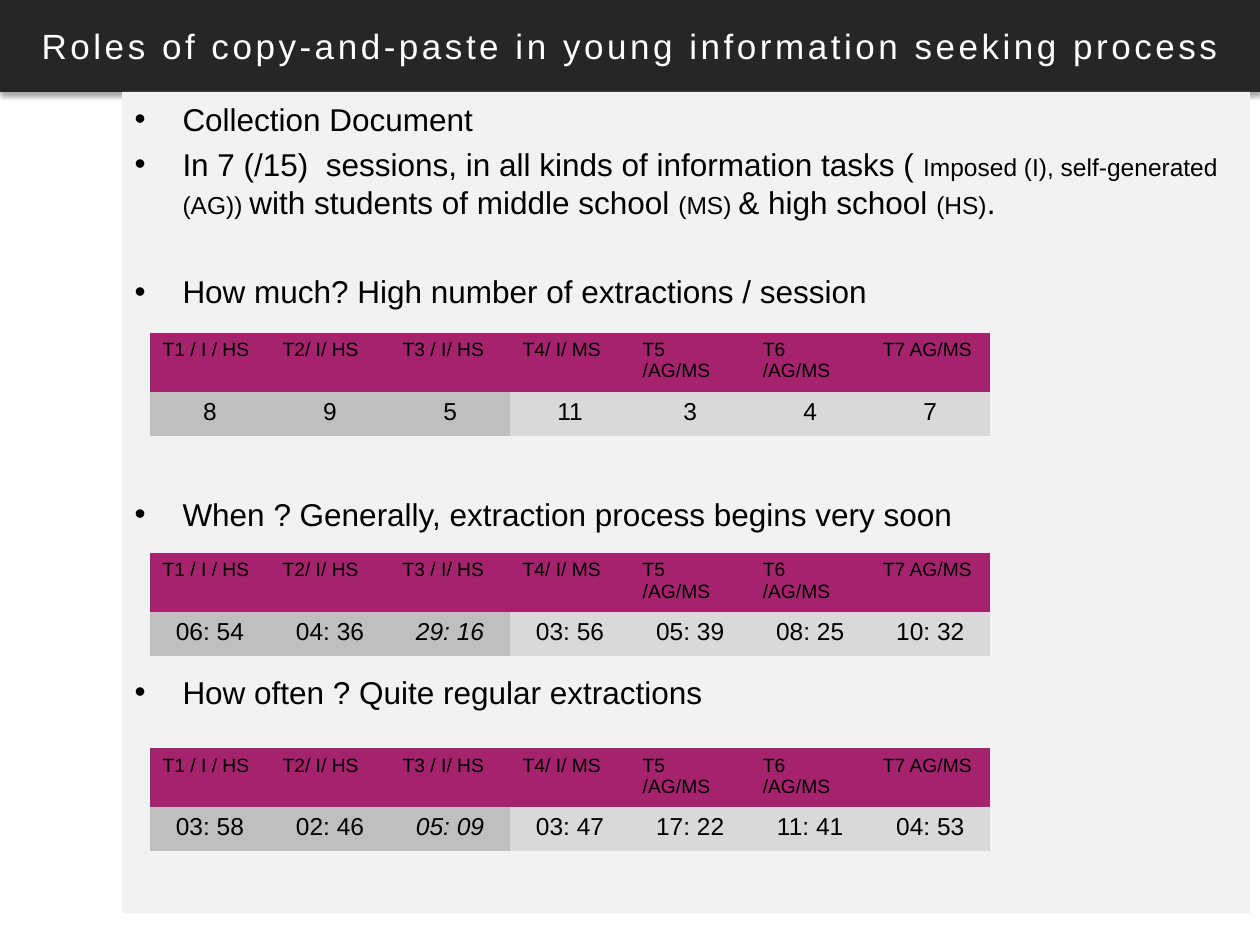
from typing import NamedTuple

from lxml.etree import SubElement
from pptx import Presentation
from pptx.dml.color import RGBColor
from pptx.enum.text import MSO_ANCHOR, MSO_AUTO_SIZE, PP_ALIGN
from pptx.oxml import parse_xml
from pptx.oxml.ns import nsdecls, qn
from pptx.util import Inches, Pt

FONT = "Arial"
BLACK, WHITE, CHARCOAL, PALE = "000000", "FFFFFF", "262626", "F2F2F2"
MAGENTA, MID_GREY, LIGHT_GREY = "A5236C", "BFBFBF", "D9D9D9"
NO_STYLE_NO_GRID = "{2D5ABB26-0587-4C30-8999-92F81FD0307C}"
HIGH_SCHOOL_TASKS = 3


class Bullet(NamedTuple):
    space_before: float
    runs: list[tuple[str, int]]


class TaskTable(NamedTuple):
    top: float
    values: list[str]
    outlier: int | None = None


TASKS = ["T1 / I / HS", "T2/ I/ HS", "T3 / I/ HS", "T4/ I/ MS",
         "T5 /AG/MS", "T6 /AG/MS", "T7 AG/MS"]

BULLETS = [
    Bullet(0, [("Collection Document", 18)]),
    Bullet(4.4, [
        ("In 7 (/15)  sessions, in all kinds of information tasks ( ", 18),
        ("Imposed (I), self-generated (AG)) ", 14),
        ("with students of middle school ", 18), ("(MS) ", 14),
        ("& high school ", 18), ("(HS)", 14), (".", 18)]),
    Bullet(29.6, [("How much? High number of extractions / session", 18)]),
    Bullet(105.6, [("When ? Generally, extraction process begins very soon", 18)]),
    Bullet(79.9, [("How often ? Quite regular extractions", 18)]),
]

TABLES = [
    TaskTable(2.64, ["8", "9", "5", "11", "3", "4", "7"]),
    TaskTable(4.39, ["06: 54", "04: 36", "29: 16", "03: 56", "05: 39",
                     "08: 25", "10: 32"], outlier=2),
    TaskTable(5.94, ["03: 58", "02: 46", "05: 09", "03: 47", "17: 22",
                     "11: 41", "04: 53"], outlier=2),
]


def paint(fill, color: str) -> None:
    fill.solid()
    fill.fore_color.rgb = RGBColor.from_string(color)


def add_run(paragraph, text: str, size: float, color: str = BLACK,
            italic: bool = False):
    run = paragraph.add_run()
    run.text = text
    settings = {"name": FONT, "size": Pt(size), "bold": False, "italic": italic}
    for attribute, value in settings.items():
        setattr(run.font, attribute, value)
    paint(run.font.fill, color)
    return run


def place(shape, left: float, top: float, width: float, height: float) -> None:
    for side, value in zip(("left", "top", "width", "height"),
                           (left, top, width, height)):
        setattr(shape, side, Inches(value))


def fill_title(title) -> None:
    place(title, 0, 0, 10, 0.73)
    paint(title.fill, CHARCOAL)
    title._element.spPr.append(parse_xml(
        f'<a:effectLst {nsdecls("a")}>'
        f'<a:outerShdw blurRad="{Pt(3.1)}" dist="{Pt(1.8)}" dir="5400000" rotWithShape="0">'
        '<a:srgbClr val="000000"><a:alpha val="35000"/></a:srgbClr>'
        '</a:outerShdw></a:effectLst>'))
    frame = title.text_frame
    frame.auto_size = MSO_AUTO_SIZE.NONE
    frame.vertical_anchor = MSO_ANCHOR.MIDDLE
    heading = frame.paragraphs[0]
    heading.alignment = PP_ALIGN.CENTER
    run = add_run(heading, "Roles of copy-and-paste in young information seeking process",
                  20, WHITE)
    run.font._element.set("spc", "200")


def add_bullets(slide, bullets: list[Bullet]) -> None:
    panel = slide.shapes.add_textbox(
        Inches(0.97), Inches(0.73), Inches(8.95), Inches(6.52))
    paint(panel.fill, PALE)
    frame = panel.text_frame
    frame.word_wrap = True
    frame.margin_top = Inches(0.06)
    for index, bullet in enumerate(bullets):
        paragraph = frame.add_paragraph() if index else frame.paragraphs[0]
        paragraph.space_before = Pt(bullet.space_before)
        properties = paragraph._p.get_or_add_pPr()
        properties.set("marL", str(Inches(0.38)))
        properties.set("indent", str(-Inches(0.38)))
        SubElement(properties, qn("a:buFont")).set("typeface", FONT)
        SubElement(properties, qn("a:buChar")).set("char", "•")
        for text, size in bullet.runs:
            add_run(paragraph, text, size)


def add_task_table(slide, spec: TaskTable) -> None:
    table = slide.shapes.add_table(
        2, len(TASKS), Inches(1.19), Inches(spec.top), Inches(6.67), Inches(0.7)).table
    table.first_row = table.horz_banding = False
    table._tbl.tblPr.find(qn("a:tableStyleId")).text = NO_STYLE_NO_GRID
    for column, (task, value) in enumerate(zip(TASKS, spec.values)):
        header, result = table.cell(0, column), table.cell(1, column)
        paint(header.fill, MAGENTA)
        add_run(header.text_frame.paragraphs[0], task, 11)
        paint(result.fill, MID_GREY if column < HIGH_SCHOOL_TASKS else LIGHT_GREY)
        paragraph = result.text_frame.paragraphs[0]
        paragraph.alignment = PP_ALIGN.CENTER
        add_run(paragraph, value, 14, italic=column == spec.outlier)


def main() -> None:
    deck = Presentation()
    deck.slide_width, deck.slide_height = Inches(10), Inches(7.5)
    slide = deck.slides.add_slide(deck.slide_layouts.get_by_name("Title Only"))
    fill_title(slide.shapes.title)
    add_bullets(slide, BULLETS)
    for task_table in TABLES:
        add_task_table(slide, task_table)
    deck.save("out.pptx")


if __name__ == "__main__":
    main()
